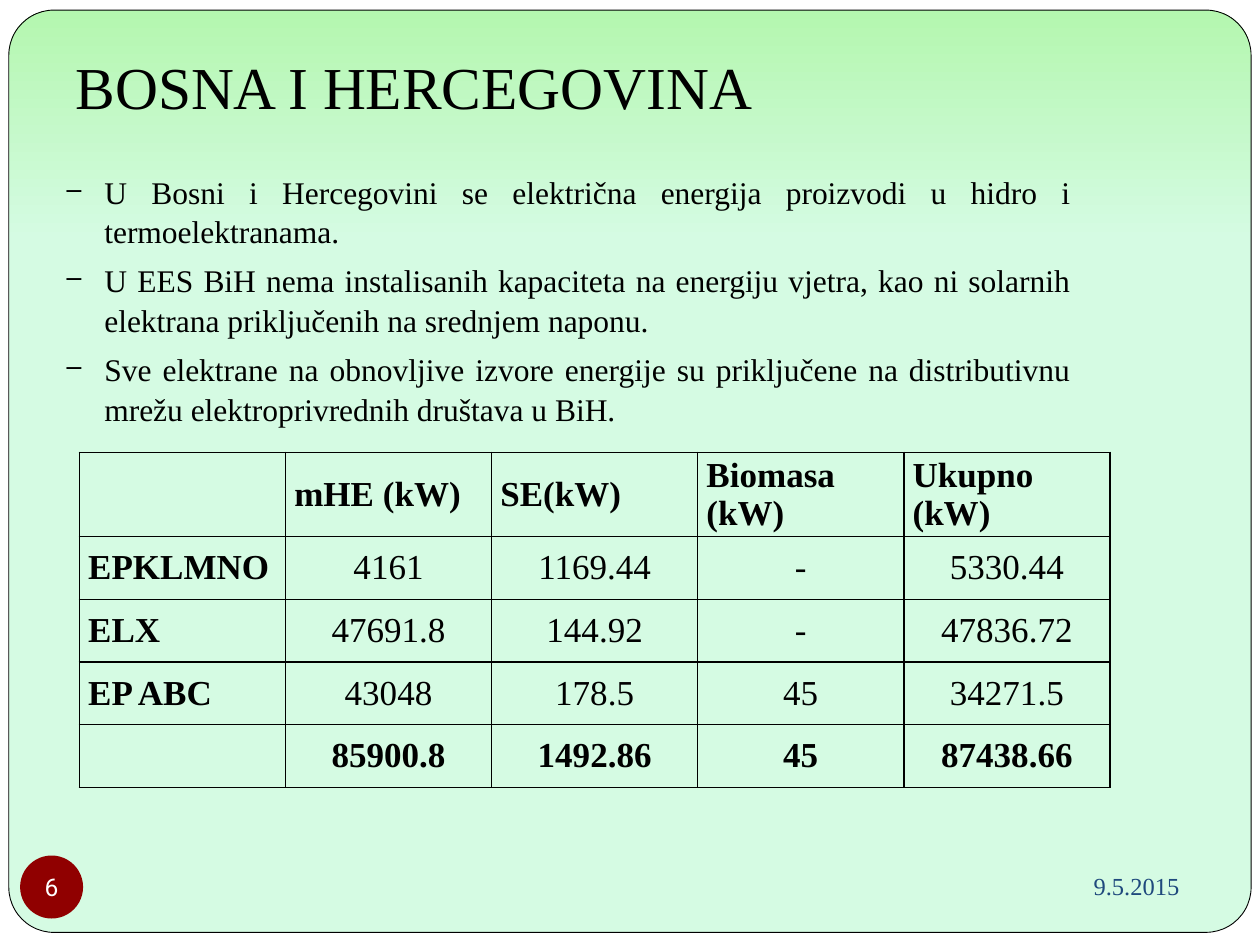
from lxml import etree
from pptx import Presentation
from pptx.dml.color import RGBColor
from pptx.enum.shapes import MSO_SHAPE
from pptx.enum.text import MSO_ANCHOR, PP_ALIGN
from pptx.oxml.ns import qn
from pptx.util import Inches, Pt

LEFT, CENTER, RIGHT, JUSTIFY = (
    PP_ALIGN.LEFT, PP_ALIGN.CENTER, PP_ALIGN.RIGHT, PP_ALIGN.JUSTIFY)
TOP, MIDDLE = MSO_ANCHOR.TOP, MSO_ANCHOR.MIDDLE
RECTANGLE, ROUNDED, OVAL = (
    MSO_SHAPE.RECTANGLE, MSO_SHAPE.ROUNDED_RECTANGLE, MSO_SHAPE.OVAL)
TITLE_ONLY = 5
COLORS = {"text": "000000", "white": "FFFFFF", "mint": "D5FBE3",
          "green": "B4F7AF", "badge": "900000", "date": "1F497D"}
SERIF, SANS = "Times New Roman", "Roboto"

POINTS = [
    "U Bosni i Hercegovini se električna energija proizvodi u hidro i termoelektranama.",
    "U EES BiH nema instalisanih kapaciteta na energiju vjetra, kao ni solarnih "
    "elektrana priključenih na srednjem naponu.",
    "Sve elektrane na obnovljive izvore energije su priključene na distributivnu "
    "mrežu elektroprivrednih društava u BiH.",
]
CAPACITY = [
    ["", "mHE (kW)", "SE(kW)", "Biomasa (kW)", "Ukupno (kW)"],
    ["EPKLMNO", "4161", "1169.44", "-", "5330.44"],
    ["ELX", "47691.8", "144.92", "-", "47836.72"],
    ["EP ABC", "43048", "178.5", "45", "34271.5"],
    ["", "85900.8", "1492.86", "45", "87438.66"],
]


def color(name):
    return RGBColor.from_string(COLORS[name])


class SlideBuilder:
    """Holds the page and its style; lengths are cells of a 100 by 75 grid."""

    def __init__(self, deck):
        self.page = deck.slides.add_slide(deck.slide_layouts[TITLE_ONLY])
        self.column = deck.slide_width / 100
        self.row = deck.slide_height / 75

    def place(self, left, top, width, height):
        return (round(left * self.column), round(top * self.row),
                round(width * self.column), round(height * self.row))

    def add_span(self, para, text, size, tint="text", font=SERIF, align=LEFT, bold=False):
        para.alignment = align
        span = para.add_run()
        span.text = text
        span.font.size = Pt(size)
        span.font.name = font
        span.font.bold = bold
        span.font.color.rgb = color(tint)

    def shape(self, kind, area, tint=None):
        shape = self.page.shapes.add_shape(kind, *self.place(*area))
        shape.shadow.inherit = False
        shape.line.fill.background()
        if tint:
            shape.fill.solid()
            shape.fill.fore_color.rgb = color(tint)
        return shape

    def panel(self, area):
        panel = self.shape(ROUNDED, area)
        panel.adjustments[0] = 0.049
        panel.fill.gradient()
        panel.fill.gradient_angle = 90
        for stop, position, tint in zip(
                panel.fill.gradient_stops, (0.75, 1), ("mint", "green")):
            stop.position = position
            stop.color.rgb = color(tint)
        panel.line.fill.solid()
        panel.line.color.rgb = color("text")
        panel.line.width = Pt(0.5)

    def title(self, area, text):
        title = self.page.shapes.title
        title.left, title.top, title.width, title.height = self.place(*area)
        frame = title.text_frame
        frame.vertical_anchor = TOP
        frame.margin_top = Inches(0.1)
        self.add_span(frame.paragraphs[0], text, 34)
        title.element.getparent().append(title.element)  # bring to the front

    def text_frame(self, area, anchor=TOP):
        frame = self.page.shapes.add_textbox(*self.place(*area)).text_frame
        frame.word_wrap = True
        frame.vertical_anchor = anchor
        return frame

    def date(self, area, text):
        frame = self.text_frame(area, MIDDLE)
        self.add_span(frame.paragraphs[0], text, 14, "date", align=RIGHT)

    def badge(self, area, text):
        frame = self.shape(OVAL, area, "badge").text_frame
        frame.margin_left = frame.margin_right = 0
        frame.margin_top = frame.margin_bottom = 0
        frame.word_wrap = False
        frame.vertical_anchor = MIDDLE
        self.add_span(frame.paragraphs[0], text, 14, "white", SANS, CENTER)

    def bullets(self, area, items):
        frame = self.text_frame(area)
        for index, item in enumerate(items):
            para = frame.add_paragraph() if index else frame.paragraphs[0]
            para.space_before = Pt(5.8)
            para.line_spacing = 1.04
            self.add_span(para, item, 18, align=JUSTIFY)
            properties = para._p.get_or_add_pPr()
            properties.set("marL", str(Inches(0.3)))
            properties.set("indent", str(-Inches(0.3)))
            etree.SubElement(properties, qn("a:buSzPct")).set("val", "85000")
            etree.SubElement(properties, qn("a:buChar")).set("char", "–")

    def table(self, area, rows, header_height):
        count = len(rows)
        table = self.page.shapes.add_table(
            count, len(rows[0]), *self.place(*area)).table
        body_height = (area[3] - header_height) / (count - 1)
        for r, values in enumerate(rows):
            height = body_height if r else header_height
            table.rows[r].height = round(height * self.row)
            for c, value in enumerate(values):
                cell = table.cell(r, c)
                cell.vertical_anchor = MIDDLE
                cell.margin_left = cell.margin_right = Inches(0.07)
                cell.margin_top = cell.margin_bottom = 0
                self.borders(cell)
                cell.fill.background()
                if value:
                    self.add_span(cell.text_frame.paragraphs[0], value, 20,
                                  align=CENTER if r and c else LEFT,
                                  bold=r in (0, count - 1) or c == 0)

    def borders(self, cell):
        properties = cell._tc.get_or_add_tcPr()
        for side in ("lnL", "lnR", "lnT", "lnB"):
            line = etree.SubElement(properties, qn("a:" + side), w=str(Pt(1)))
            fill = etree.SubElement(line, qn("a:solidFill"))
            etree.SubElement(fill, qn("a:srgbClr"), val=COLORS["text"])


def main():
    deck = Presentation()
    deck.slide_width, deck.slide_height = Inches(10), Inches(7.5)
    slide = SlideBuilder(deck)
    slide.shape(RECTANGLE, (0, 0, 100, 75), "white")
    slide.panel((0.7, 0.8, 98.6, 73.2))
    slide.date((67.5, 67.7, 27.1, 5.2), "9.5.2015")
    slide.badge((1.6, 67.9, 5, 5), "6")
    slide.title((5, 3, 81.7, 5.6), "BOSNA I HERCEGOVINA")
    slide.bullets((4.3, 13.1, 81.7, 18.9), POINTS)
    slide.table((6.3, 35.9, 81.8, 26.6), CAPACITY, header_height=6.7)
    deck.save("out.pptx")


if __name__ == "__main__":
    main()
